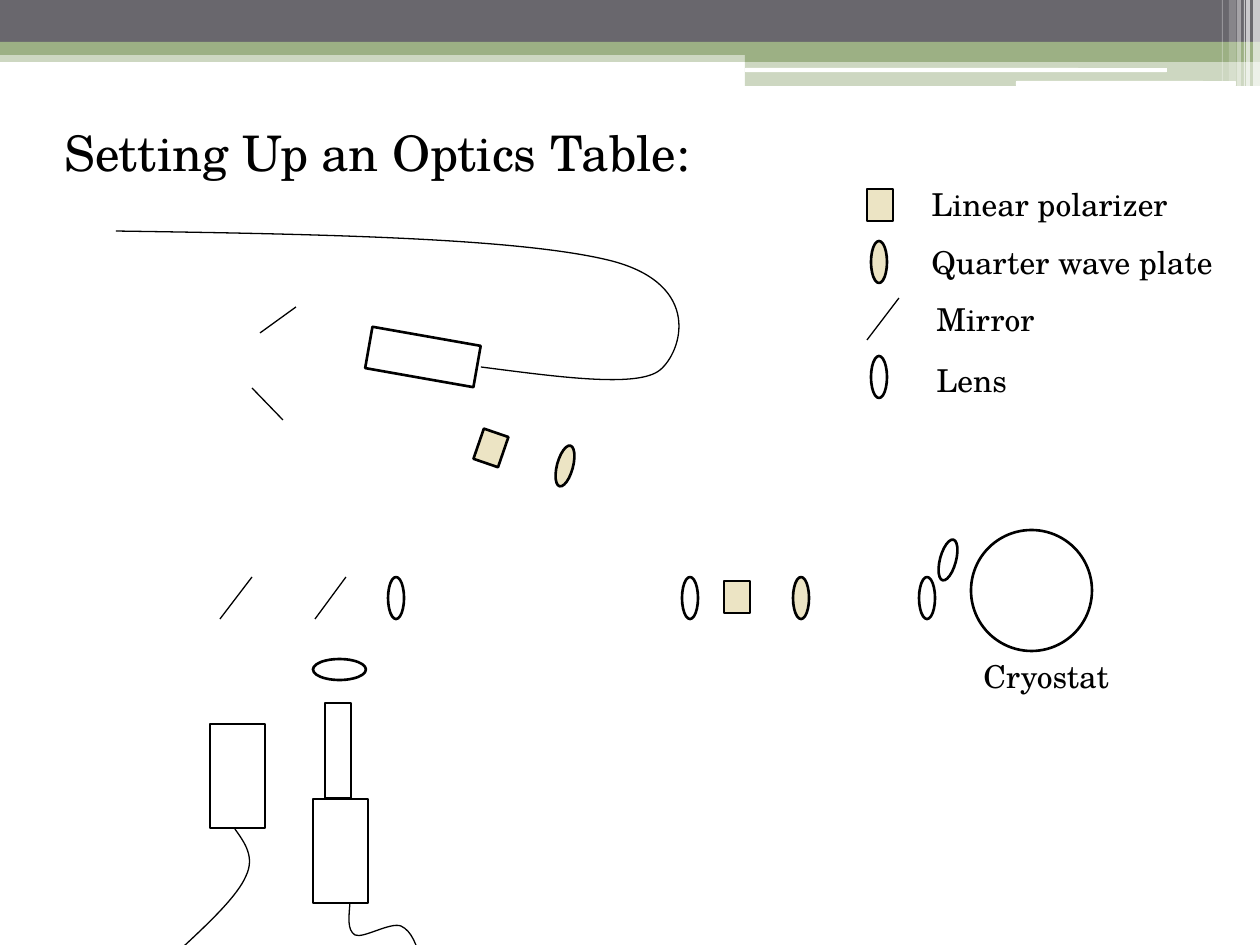
from dataclasses import dataclass
from typing import NamedTuple

from pptx import Presentation, util as u
from pptx.dml.color import RGBColor
from pptx.enum import shapes, text
from pptx.oxml import ns, xmlchemy

RECTANGLE = shapes.MSO_SHAPE.RECTANGLE
ROUNDED = shapes.MSO_SHAPE.ROUNDED_RECTANGLE
OVAL = shapes.MSO_SHAPE.OVAL
EMU_PER_PX = 914400 / 126


@dataclass(frozen=True)
class Theme:
    font: str = "TeX Gyre Schola"
    title_size: int = 28
    label_size: int = 18
    ink: str = "000000"
    white: str = "FFFFFF"
    slate: str = "69676D"
    green: str = "9CB084"
    tan: str = "CEB966"
    tan_opacity: int = 38
    outline: float = 1.5
    thin: float = 0.75


THEME = Theme()


class Box(NamedTuple):
    left: int
    top: int
    width: int
    height: int


class Band(NamedTuple):
    box: Box
    color: str
    opacity: int = 100
    kind: int = RECTANGLE


class Optic(NamedTuple):
    """A kind of optical part that recurs on the table and in the legend."""
    kind: int
    width: int
    height: int
    color: str
    opacity: int = 100


class Placed(NamedTuple):
    optic: Optic
    left: int
    top: int
    rotation: int = 0


class Segment(NamedTuple):
    x1: int
    y1: int
    x2: int
    y2: int


class Label(NamedTuple):
    words: str
    box: Box


POLARIZER = Optic(RECTANGLE, 26, 32, THEME.tan, THEME.tan_opacity)
WAVE_PLATE = Optic(OVAL, 16, 42, THEME.tan, THEME.tan_opacity)
LENS = Optic(OVAL, 16, 42, THEME.white)
CRYOSTAT = Optic(OVAL, 121, 121, THEME.white)
LASER = Optic(RECTANGLE, 110, 42, "")
TUBE = Optic(RECTANGLE, 26, 95, "")
DETECTOR = Optic(RECTANGLE, 55, 104, "")
FLAT_LENS = Optic(OVAL, 53, 21, "")

BANDS = [
    Band(Box(0, 50, 1260, 12), THEME.green, 50),
    Band(Box(0, 0, 1260, 42), THEME.slate),
    Band(Box(0, 42, 1260, 13), THEME.green),
    Band(Box(745, 49, 515, 13), THEME.green),
    Band(Box(745, 62, 515, 24), THEME.green, 50),
    Band(Box(745, 68, 422, 4), THEME.white, kind=ROUNDED),
    Band(Box(1016, 81, 220, 5), THEME.white, kind=ROUNDED),
    Band(Box(1253, 0, 7, 86), THEME.white, 65),
    Band(Box(1246, 0, 4, 86), THEME.white, 65),
    Band(Box(1244, 0, 1, 86), THEME.white, 60),
    Band(Box(1237, 0, 4, 86), THEME.white, 40),
    Band(Box(1229, 0, 7, 81), THEME.white, 20),
    Band(Box(1222, 0, 1, 81), THEME.white, 30),
]

LEGEND_OPTICS = [
    Placed(POLARIZER, 867, 189),
    Placed(WAVE_PLATE, 871, 241),
    Placed(LENS, 871, 356),
]

TABLE_OPTICS = [
    Placed(CRYOSTAT, 971, 530),
    Placed(LENS, 919, 577),
    Placed(LENS, 940, 539, 15),
    Placed(LENS, 682, 577),
    Placed(LASER, 368, 336, 10),
    Placed(POLARIZER, 478, 432, 19),
    Placed(POLARIZER, 724, 581),
    Placed(WAVE_PLATE, 793, 577),
    Placed(WAVE_PLATE, 557, 445, 15),
    Placed(LENS, 388, 577),
    Placed(TUBE, 325, 703),
    Placed(DETECTOR, 313, 799),
    Placed(FLAT_LENS, 313, 659),
    Placed(DETECTOR, 210, 724),
]

MIRRORS = [
    Segment(899, 298, 867, 340),
    Segment(283, 420, 252, 388),
    Segment(260, 333, 296, 307),
    Segment(346, 577, 315, 619),
    Segment(252, 577, 220, 619),
]

# Each cable is a start point, then three Bézier points per curve.
CABLES = [
    [(481, 367), (559, 377), (638, 388), (660, 370), (682, 352), (703, 285),
     (612, 261), (522, 238), (319, 234), (116, 231)],
    [(350, 903), (349, 917), (347, 930), (355, 935), (363, 939), (390, 922),
     (401, 926), (412, 931), (417, 946), (421, 961)],
    [(235, 829), (245, 843), (255, 857), (246, 876), (238, 895), (211, 921),
     (184, 946)],
]

LABELS = [
    Label("Linear polarizer", Box(919, 179, 288, 50)),
    Label("Quarter wave plate", Box(919, 237, 320, 50)),
    Label("Mirror", Box(924, 294, 288, 50)),
    Label("Lens", Box(924, 355, 288, 50)),
    Label("Cryostat", Box(971, 651, 288, 50)),
]


def px(length: int) -> u.Emu:
    return u.Emu(round(length * EMU_PER_PX))


def set_fill(shape, color: str, opacity: int) -> None:
    if not color:
        shape.fill.background()
        return
    shape.fill.solid()
    shape.fill.fore_color.rgb = RGBColor.from_string(color)
    if opacity < 100:
        rgb = next(shape._element.spPr.iter(ns.qn("a:srgbClr")))
        xmlchemy.OxmlElement("a:alpha")
        alpha = xmlchemy.OxmlElement("a:alpha")
        alpha.set("val", str(opacity * 1000))
        rgb.append(alpha)


def set_line(shape, width: float) -> None:
    shape.line.color.rgb = RGBColor.from_string(THEME.ink)
    shape.line.width = u.Pt(width)


def add_filled(slide, kind: int, box: Box, color: str, opacity: int):
    shape = slide.shapes.add_shape(kind, *map(px, box))
    shape.shadow.inherit = False
    set_fill(shape, color, opacity)
    shape.line.fill.background()
    return shape


def add_optic(slide, placed: Placed) -> None:
    optic = placed.optic
    box = Box(placed.left, placed.top, optic.width, optic.height)
    shape = add_filled(slide, optic.kind, box, optic.color, optic.opacity)
    set_line(shape, THEME.outline)
    shape.rotation = placed.rotation


def add_mirror(slide, segment: Segment) -> None:
    mirror = slide.shapes.add_connector(
        shapes.MSO_CONNECTOR.STRAIGHT, *map(px, segment))
    set_line(mirror, THEME.thin)
    mirror._element.spPr.append(xmlchemy.OxmlElement("a:effectLst"))


def add_cable(slide, points: list[tuple[int, int]]) -> None:
    """Draw a polyline, then turn every three of its steps into one curve."""
    start, *rest = [(px(x), px(y)) for x, y in points]
    builder = slide.shapes.build_freeform(*start)
    builder.add_line_segments(rest, close=False)
    cable = builder.convert_to_shape()
    steps = list(cable._element.iter(ns.qn("a:lnTo")))
    for first in range(0, len(steps), 3):
        curve = xmlchemy.OxmlElement("a:cubicBezTo")
        steps[first].addprevious(curve)
        for step in steps[first:first + 3]:
            curve.append(step[0])
            step.getparent().remove(step)
    cable.shadow.inherit = False
    cable.fill.background()
    set_line(cable, THEME.thin)


def write(shape, words: str, size: int) -> None:
    frame = shape.text_frame
    frame.text = words
    frame.word_wrap = True
    frame.vertical_anchor = text.MSO_ANCHOR.TOP
    paragraph = frame.paragraphs[0]
    paragraph.alignment = text.PP_ALIGN.LEFT
    paragraph.font.name = THEME.font
    paragraph.font.size = u.Pt(size)
    paragraph.font.color.rgb = RGBColor.from_string(THEME.ink)


def main() -> None:
    presentation = Presentation()
    presentation.slide_width, presentation.slide_height = px(1260), px(945)
    slide = presentation.slides.add_slide(presentation.slide_layouts[5])

    for band in BANDS:
        add_filled(slide, band.kind, band.box, band.color, band.opacity)

    title = slide.shapes.title
    title.left, title.top, title.width, title.height = map(
        px, Box(52, 116, 872, 72))
    write(title, "Setting Up an Optics Table:", THEME.title_size)

    for placed in LEGEND_OPTICS + TABLE_OPTICS:
        add_optic(slide, placed)
    for segment in MIRRORS:
        add_mirror(slide, segment)
    for points in CABLES:
        add_cable(slide, points)
    for label in LABELS:
        write(slide.shapes.add_textbox(*map(px, label.box)),
              label.words, THEME.label_size)

    presentation.save("out.pptx")


if __name__ == "__main__":
    main()
